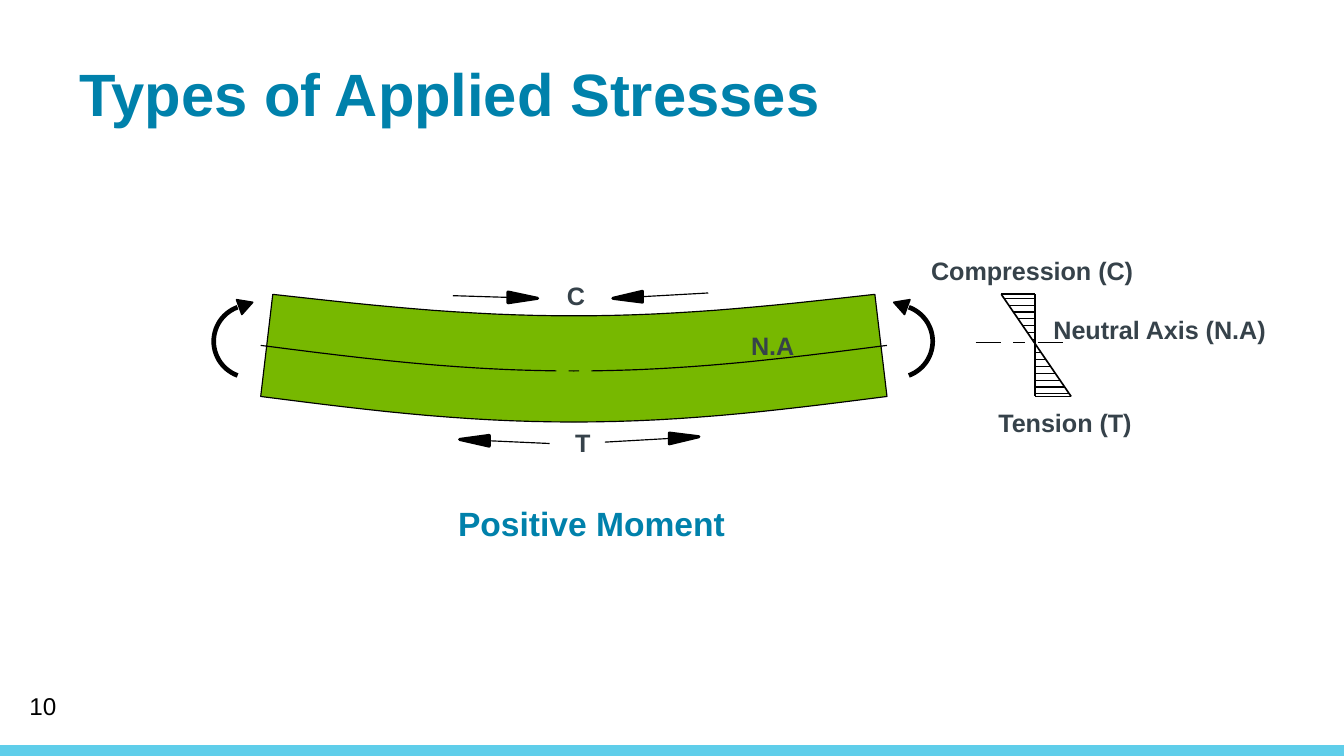
import math
from dataclasses import dataclass

import lxml.etree
import pptx
import pptx.dml.color
import pptx.enum.shapes
import pptx.enum.text
import pptx.oxml.ns
import pptx.util

Inches = pptx.util.Inches

SLIDE_WIDTH = 10
SLIDE_HEIGHT = SLIDE_WIDTH * 9 / 16
MIDSPAN = 4.27


@dataclass(frozen=True)
class Theme:
    font: str = "Arial"
    accent: str = "0081AB"
    label: str = "36424A"
    ink: str = "000000"
    beam: str = "77B800"
    footer: str = "5FCEEA"
    title_size: float = 32
    caption_size: float = 18
    label_size: float = 13.5
    number_size: float = 13
    thin: float = 0.63
    medium: float = 0.88
    thick: float = 1.63
    heavy: float = 2.5


class Diagram:
    def __init__(self, slide, theme):
        self.slide = slide
        self.theme = theme

    def paint(self, shape, fill=None, line=None, width=None):
        shape.shadow.inherit = False
        if fill:
            shape.fill.solid()
            shape.fill.fore_color.rgb = pptx.dml.color.RGBColor.from_string(fill)
        else:
            shape.fill.background()
        if line:
            shape.line.color.rgb = pptx.dml.color.RGBColor.from_string(line)
            shape.line.width = pptx.util.Pt(width)
        else:
            shape.line.fill.background()

    def bar(self, left, top, width, height, fill):
        bar = self.slide.shapes.add_shape(
            pptx.enum.shapes.MSO_SHAPE.RECTANGLE,
            Inches(left), Inches(top), Inches(width), Inches(height))
        self.paint(bar, fill)

    def outline(self, points, width, fill=None):
        corners = [(Inches(x), Inches(y)) for x, y in points]
        builder = self.slide.shapes.build_freeform(*corners[0])
        builder.add_line_segments(corners[1:], close=fill is not None)
        self.paint(builder.convert_to_shape(), fill, self.theme.ink, width)

    def line(self, start, end, width):
        line = self.slide.shapes.add_connector(
            pptx.enum.shapes.MSO_CONNECTOR.STRAIGHT,
            *(Inches(value) for value in (*start, *end)))
        line.line.color.rgb = pptx.dml.color.RGBColor.from_string(self.theme.ink)
        line.line.width = pptx.util.Pt(width)
        lxml.etree.SubElement(line._element.spPr, pptx.oxml.ns.qn("a:effectLst"))

    def force(self, tail, tip):
        self.line(tail, tip, self.theme.thin)
        length = 0.22
        half_height = 0.04
        share = length / abs(tip[0] - tail[0])
        base_x = tip[0] + (tail[0] - tip[0]) * share
        base_y = tip[1] + (tail[1] - tip[1]) * share
        self.outline([tip, (base_x, base_y - half_height), (base_x, base_y + half_height)],
                     self.theme.thick, self.theme.ink)

    def text(self, words, left, top, width, height, size, color,
             bold=True, wrap=False, inset=0.1, middle=False):
        box = self.slide.shapes.add_textbox(
            Inches(left), Inches(top), Inches(width), Inches(height))
        frame = box.text_frame
        frame.word_wrap = wrap
        frame.margin_left = Inches(inset)
        if middle:
            frame.vertical_anchor = pptx.enum.text.MSO_ANCHOR.MIDDLE
        paragraph = frame.paragraphs[0]
        paragraph.text = words
        paragraph.font.name = self.theme.font
        paragraph.font.size = pptx.util.Pt(size)
        paragraph.font.bold = bold
        paragraph.font.color.rgb = pptx.dml.color.RGBColor.from_string(color)


def sagging(start, end, edge_y, depth, half_span, steps=30):
    xs = [start + (end - start) * step / steps for step in range(steps + 1)]
    return [(x, edge_y + depth * math.cos(math.pi / 2 * (x - MIDSPAN) / half_span))
            for x in xs]


def mirrored(points):
    return [(2 * MIDSPAN - 0.01 - x, y) for x, y in points]


def draw_beam(diagram):
    theme = diagram.theme
    top = sagging(2.03, 6.51, 2.19, 0.16, 2.24)
    bottom = sagging(1.94, 6.6, 2.95, 0.19, 2.33)
    diagram.outline(top + bottom[::-1], theme.thin, theme.beam)
    for start, end in ((1.94, 4.14), (4.23, 4.31), (4.4, 6.6)):
        diagram.outline(sagging(start, end, 2.57, 0.19, 2.33), theme.thin)


def draw_moments(diagram):
    theme = diagram.theme
    radius = 0.27
    arc = [(6.67 + radius * math.cos(math.radians(angle)),
            2.54 + radius * math.sin(math.radians(angle)))
           for angle in range(70, -71, -5)]
    head = [(6.77, 2.23), (6.73, 2.34), (6.65, 2.25)]
    for curve, tip in ((arc, head), (mirrored(arc), mirrored(head))):
        diagram.outline(curve, theme.heavy)
        diagram.outline(tip, theme.medium, theme.ink)


def draw_stress_profile(diagram):
    theme = diagram.theme
    left, axis, right = 7.45, 7.7, 7.97
    top, bottom = 2.19, 2.95
    rows = 15
    for row in range(rows):
        y = 2.22 + 0.71 * row / (rows - 1)
        slope_x = left + (right - left) * (y - top) / (bottom - top)
        diagram.line((slope_x, y), (axis, y), theme.thin)
    for start, end in (((left, top), (axis, top)), ((axis, bottom), (right, bottom)),
                       ((axis, top), (axis, bottom)), ((left, top), (right, bottom))):
        diagram.line(start, end, theme.medium)
    for start, end in ((7.26, 7.45), (7.54, 7.63), (7.72, 7.91)):
        diagram.line((start, 2.55), (end, 2.55), theme.thin)


def main():
    deck = pptx.Presentation()
    deck.slide_width = Inches(SLIDE_WIDTH)
    deck.slide_height = Inches(SLIDE_HEIGHT)
    theme = Theme()
    diagram = Diagram(deck.slides.add_slide(deck.slide_layouts[6]), theme)

    footer_height = 0.08
    diagram.bar(0, SLIDE_HEIGHT - footer_height, SLIDE_WIDTH, footer_height, theme.footer)
    diagram.text("Types of Applied Stresses", 0.59, 0.37, 8.99, 0.57,
                 theme.title_size, theme.accent, wrap=True, inset=0)
    diagram.text("Positive Moment", 3.31, 3.69, 2.21, 0.4,
                 theme.caption_size, theme.accent)

    draw_beam(diagram)
    draw_moments(diagram)
    for tail, tip in (((3.37, 2.2), (4, 2.22)), ((5.27, 2.18), (4.56, 2.22)),
                      ((4.09, 3.3), (3.42, 3.27)), ((4.5, 3.29), (5.2, 3.25))):
        diagram.force(tail, tip)
    draw_stress_profile(diagram)

    for words, left, top, width in (
            ("C", 4.12, 2.04, 0.34), ("T", 4.18, 3.13, 0.32), ("N.A", 5.49, 2.41, 0.53),
            ("Tension (T)", 7.33, 2.98, 1.21), ("Compression (C)", 6.83, 1.85, 1.73),
            ("Neutral Axis (N.A)", 7.74, 2.29, 1.8)):
        diagram.text(words, left, top, width, 0.33, theme.label_size, theme.label)
    diagram.text("10", 0.12, 5.1, 2.25, 0.3, theme.number_size, theme.ink,
                 bold=False, wrap=True, middle=True)

    deck.save("out.pptx")


if __name__ == "__main__":
    main()
